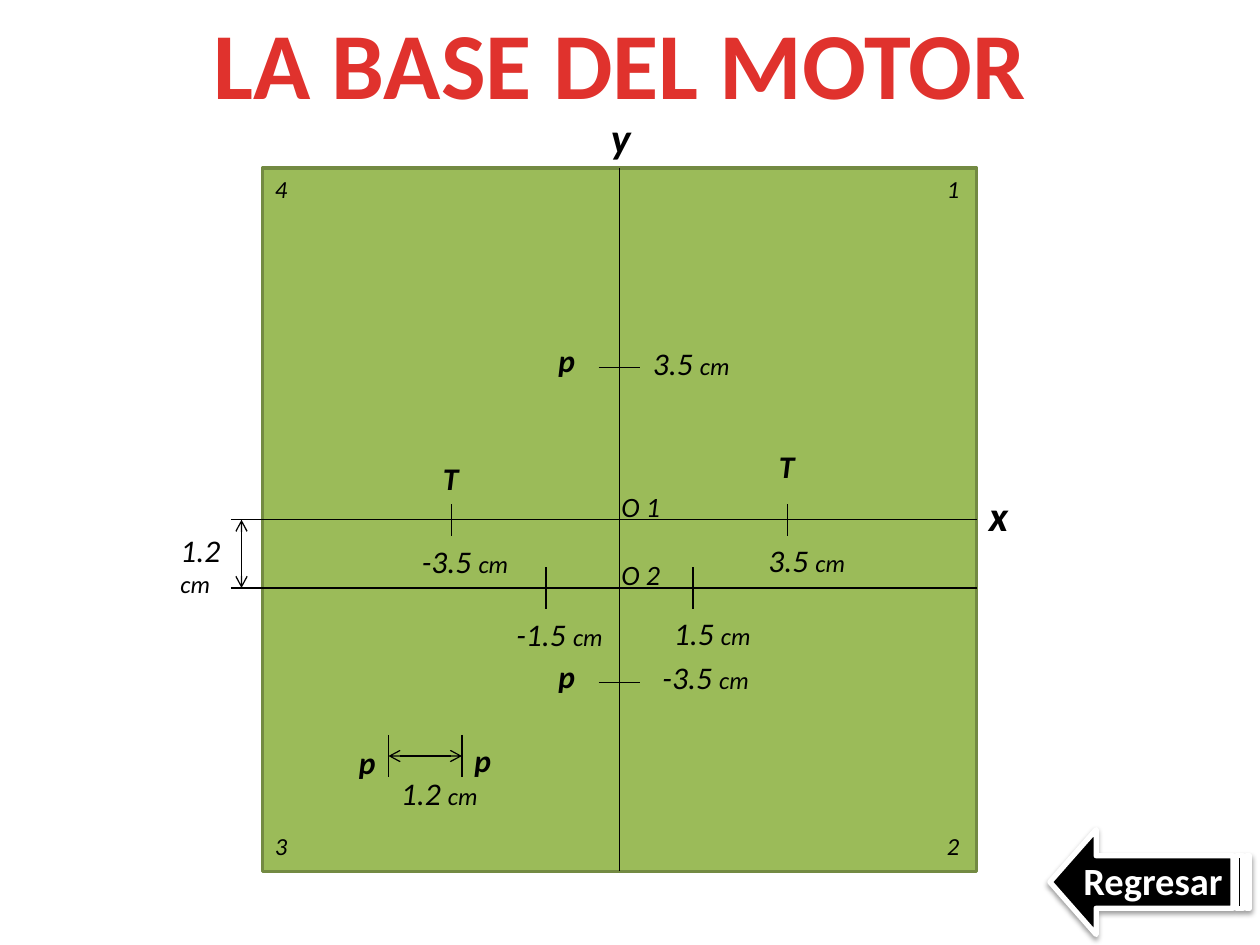
import dataclasses
import typing

import lxml.etree
import pptx
import pptx.dml.color
import pptx.enum.shapes
import pptx.enum.text
import pptx.oxml.ns
import pptx.util

Pt = pptx.util.Pt
RGB = pptx.dml.color.RGBColor
qn = pptx.oxml.ns.qn
Kind = pptx.enum.shapes.MSO_SHAPE
BLACK = RGB(0, 0, 0)
WHITE = RGB(255, 255, 255)
RED = RGB(0xE0, 0x32, 0x2D)
GREEN = RGB(0x9B, 0xBB, 0x59)
OLIVE = RGB(0x73, 0x8A, 0x42)

AXIS = {"size": Pt(24), "bold": True, "italic": True}
MARK = {"size": Pt(18), "bold": True, "italic": True}
VALUE = {"size": Pt(18), "bold": False, "italic": True}
UNIT = {"size": Pt(14), "bold": False, "italic": True}
ZERO = {"size": Pt(16), "bold": False, "italic": True}
HEAD = {"size": Pt(54), "bold": True, "italic": False}
BACK = {"size": Pt(22), "bold": True, "italic": False}


@dataclasses.dataclass
class Label:
    text: str
    left: float
    top: float
    wide: float
    high: float
    style: dict
    unit: str = ""
    color: RGB = BLACK
    wrap: bool = True


@dataclasses.dataclass
class Line:
    x1: float
    y1: float
    x2: float
    y2: float
    arrow: bool = False


def add_run(para: typing.Any, text: str, style: dict, color: RGB) -> None:
    run = para.add_run()
    run.text = text
    run.font.name = "Calibri"
    run.font.color.rgb = color
    for name, value in style.items():
        setattr(run.font, name, value)


def draw_label(slide: typing.Any, label: Label) -> None:
    box = slide.shapes.add_textbox(
        Pt(label.left), Pt(label.top), Pt(label.wide), Pt(label.high))
    frame = box.text_frame
    frame.word_wrap = label.wrap
    frame.auto_size = pptx.enum.text.MSO_AUTO_SIZE.SHAPE_TO_FIT_TEXT
    para = frame.paragraphs[0]
    if not label.wrap:
        para.alignment = pptx.enum.text.PP_ALIGN.CENTER
    add_run(para, label.text, label.style, label.color)
    if label.unit:
        add_run(para, label.unit, UNIT, label.color)


def draw_line(slide: typing.Any, line: Line) -> typing.Any:
    link = slide.shapes.add_connector(
        pptx.enum.shapes.MSO_CONNECTOR.STRAIGHT,
        Pt(line.x1), Pt(line.y1), Pt(line.x2), Pt(line.y2))
    link.line.color.rgb = BLACK
    link.line.width = Pt(0.75)
    if line.arrow:
        pen = link.line._get_or_add_ln()
        for end in ("a:headEnd", "a:tailEnd"):
            lxml.etree.SubElement(pen, qn(end), type="arrow")
    lxml.etree.SubElement(link._element.spPr, qn("a:effectLst"))
    return link


def draw_shape(slide: typing.Any, kind: Kind, area: tuple, fill: RGB,
               edge: RGB, width: float) -> typing.Any:
    shape = slide.shapes.add_shape(kind, *map(Pt, area))
    shape.shadow.inherit = False
    shape.fill.solid()
    shape.fill.fore_color.rgb = fill
    shape.line.color.rgb = edge
    shape.line.width = Pt(width)
    return shape


def draw_arrow(slide: typing.Any) -> None:
    arrow = draw_shape(slide, Kind.STRIPED_RIGHT_ARROW,
                       (600, 474, 114, 60), BLACK, WHITE, 3)
    arrow.adjustments[1] = 0.44
    props = arrow._element.spPr
    props.find(qn("a:xfrm")).set("flipH", "1")
    shade = lxml.etree.SubElement(
        props.find(qn("a:effectLst")), qn("a:outerShdw"),
        blurRad=str(Pt(3.1)), dist=str(Pt(1.6)), dir="5400000", rotWithShape="0")
    tint = lxml.etree.SubElement(shade, qn("a:srgbClr"), val=str(BLACK))
    lxml.etree.SubElement(tint, qn("a:alpha"), val="38000")


LEFT, TOP, WIDE, HIGH = 150, 96, 408, 402
RIGHT, LOW = LEFT + WIDE, TOP + HIGH
MID_X, MID_Y = LEFT + WIDE / 2, TOP + HIGH / 2
START, SECOND = 132, 336

LINES = [
    Line(START, SECOND, RIGHT, SECOND),
    *[Line(MID_X - 12, y, MID_X + 12, y) for y in (210, 390)],
    *[Line(x, MID_Y - 9, x, MID_Y + 9) for x in (258, 450)],
    *[Line(x, SECOND - 12, x, SECOND + 12) for x in (312, 396)],
    *[Line(x, 420, x, 444) for x in (222, 264)],
    Line(138, MID_Y, 138, SECOND, True),
    Line(264, 432, 222, 432, True),
]

LABELS = [
    Label("LA BASE DEL MOTOR", 108, -0.5, 492.5, 72.7, HEAD,
          color=RED, wrap=False),
    Label("y", 342, 60, 24, 36, AXIS),
    Label("x", RIGHT, 276, 24, 36, AXIS),
    *[Label(text, x, y, 24, 24.5, UNIT) for text, x, y in (
        ("4", LEFT, TOP), ("1", 534, TOP),
        ("3", LEFT, 471.5), ("2", 534, 471.5))],
    *[Label(text, x, y, 24, 29, MARK) for text, x, y in (
        ("p", 312, 191.5), ("p", 312, 372), ("T", 246, 259),
        ("T", 438, 252), ("p", 198, 421), ("p", 264, 420))],
    *[Label(text, x, y, wide, 29, VALUE, "cm") for text, x, y, wide in (
        ("3.5 ", 366, 193, 72), ("3.5 ", 432, 305.5, 66),
        ("-3.5 ", 371.5, 372.5, 78), ("-3.5 ", 234, 306, 72),
        ("1.5 ", 378, 347.5, 66), ("-1.5 ", 288, 348, 72),
        ("1.2 ", 222, 439, 66))],
    Label("1.2 ", 96, 300, 48, 46, VALUE, "cm"),
    Label("O 1", 348, 276, 48, 26.5, ZERO),
    Label("O 2", 348, 315, 48, 26.5, ZERO),
    Label("Regresar", 612, 486, 96, 37, BACK, color=WHITE),
]


def main() -> None:
    deck = pptx.Presentation()
    deck.slide_width, deck.slide_height = Pt(720), Pt(540)
    slide = deck.slides.add_slide(deck.slide_layouts[6])
    base = draw_shape(slide, Kind.RECTANGLE, (LEFT, TOP, WIDE, HIGH),
                      GREEN, OLIVE, 2)
    axis_y = draw_line(slide, Line(MID_X, TOP, MID_X, LOW))
    axis_y.begin_connect(base, 0)
    axis_y.end_connect(base, 2)
    axis_x = draw_line(slide, Line(START, MID_Y, RIGHT, MID_Y))
    axis_x.end_connect(base, 3)
    for line in LINES:
        draw_line(slide, line)
    draw_arrow(slide)
    for label in LABELS:
        draw_label(slide, label)
    deck.save("out.pptx")


if __name__ == "__main__":
    main()
